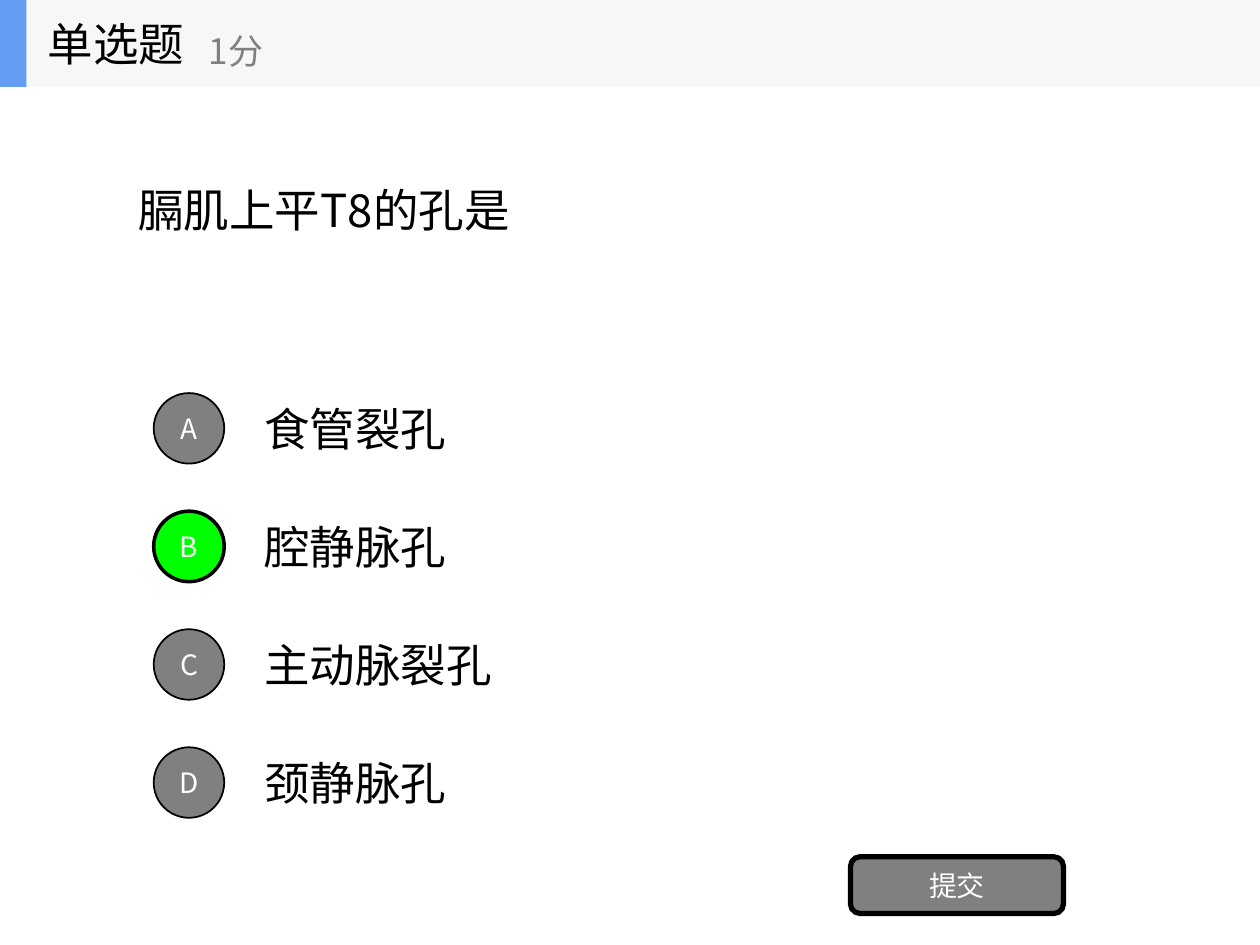
import lxml.etree
import pptx
import pptx.dml.color
import pptx.enum.shapes
import pptx.enum.text
import pptx.oxml.ns
import pptx.util

RGBColor = pptx.dml.color.RGBColor
BLACK = RGBColor(0x00, 0x00, 0x00)
WHITE = RGBColor(0xFF, 0xFF, 0xFF)
GRAY = RGBColor(0x80, 0x80, 0x80)
GREEN = RGBColor(0x00, 0xFF, 0x00)
BLUE = RGBColor(0x63, 0x9E, 0xF4)
PALE = RGBColor(0xF6, 0xF7, 0xF8)

SHAPE = pptx.enum.shapes.MSO_SHAPE
ALIGN = pptx.enum.text.PP_ALIGN
COLUMNS, ROWS = 100, 75
HEADER_ROWS = 6.9
OPTION_TOP, OPTION_PITCH, OPTION_ROWS = 30.5, 9.37, 7
BADGE_SIZE = 5.6


class QuizSlide:
    """Holds the style and current slide, and places elements on a grid of columns and rows."""

    font_name = "Noto Sans CJK SC"

    def __init__(self, deck):
        self.column = deck.slide_width / COLUMNS
        self.row = deck.slide_height / ROWS
        self.slide = deck.slides.add_slide(deck.slide_layouts[6])
        self.shapes = self.slide.shapes

    def place(self, left, top, width, height):
        return [round(share * unit) for share, unit in zip(
            (left, top, width, height), (self.column, self.row) * 2)]

    def wording(self, frame, words, size, color, align):
        frame.word_wrap = True
        frame.vertical_anchor = pptx.enum.text.MSO_ANCHOR.MIDDLE
        paragraph = frame.paragraphs[0]
        paragraph.alignment = align
        run = paragraph.add_run()
        run.text = words
        run.font.color.rgb = color
        for key, value in {"name": self.font_name, "size": pptx.util.Pt(size)}.items():
            setattr(run.font, key, value)
        properties = run._r.get_or_add_rPr()
        east_asian = lxml.etree.SubElement(properties, pptx.oxml.ns.qn("a:ea"))
        east_asian.set("typeface", self.font_name)

    def text(self, words, area, size=26, color=BLACK, bottom=0.5):
        frame = self.shapes.add_textbox(*self.place(*area)).text_frame
        self.wording(frame, words, size, color, ALIGN.LEFT)
        frame.margin_bottom = round(bottom * self.row)

    def block(self, kind, area, fill, outline=0):
        block = self.shapes.add_shape(kind, *self.place(*area))
        block.shadow.inherit = False
        block.fill.solid()
        block.fill.fore_color.rgb = fill
        if outline:
            block.line.color.rgb = BLACK
            block.line.width = pptx.util.Pt(outline)
        else:
            block.line.fill.background()
        return block

    def button(self, words, kind, area, fill, outline):
        frame = self.block(kind, area, fill, outline).text_frame
        margins = ("margin_left", "margin_right", "margin_top", "margin_bottom")
        for key, value in dict.fromkeys(margins, 0).items():
            setattr(frame, key, value)
        self.wording(frame, words, 16, WHITE, ALIGN.CENTER)

    def header(self, title, score):
        self.shapes = self.slide.shapes.add_group_shape().shapes
        self.block(SHAPE.RECTANGLE, (0, 0, COLUMNS, HEADER_ROWS), PALE)
        self.block(SHAPE.RECTANGLE, (0, 0, 2.1, HEADER_ROWS), BLUE)
        self.text(title, (2.8, 0, 20.8, HEADER_ROWS))
        self.text(score, (15.6, 1.2, 25, 5.6), 20, GRAY)
        self.shapes = self.slide.shapes

    def option(self, index, letter, answer, chosen):
        top = OPTION_TOP + index * OPTION_PITCH
        self.text(answer, (20, top, 70, OPTION_ROWS))
        badge = (12.2, top + (OPTION_ROWS - BADGE_SIZE) / 2, BADGE_SIZE, BADGE_SIZE)
        fill, outline = (GREEN, 2) if chosen else (GRAY, 1)
        self.button(letter, SHAPE.OVAL, badge, fill, outline)


def main():
    deck = pptx.Presentation()
    deck.slide_width = pptx.util.Inches(10)
    deck.slide_height = pptx.util.Inches(7.5)
    quiz = QuizSlide(deck)
    quiz.text("膈肌上平T8的孔是", (10, HEADER_ROWS, 80, 23.4), bottom=4.5)
    answers = ("食管裂孔", "腔静脉孔", "主动脉裂孔", "颈静脉孔")
    for index, (letter, answer) in enumerate(zip("ABCD", answers)):
        quiz.option(index, letter, answer, letter == "B")
    quiz.button("提交", SHAPE.ROUNDED_RECTANGLE, (67.5, 68, 16.9, 4.5), GRAY, 3)
    quiz.header("单选题", "1分")
    deck.save("out.pptx")


if __name__ == "__main__":
    main()
